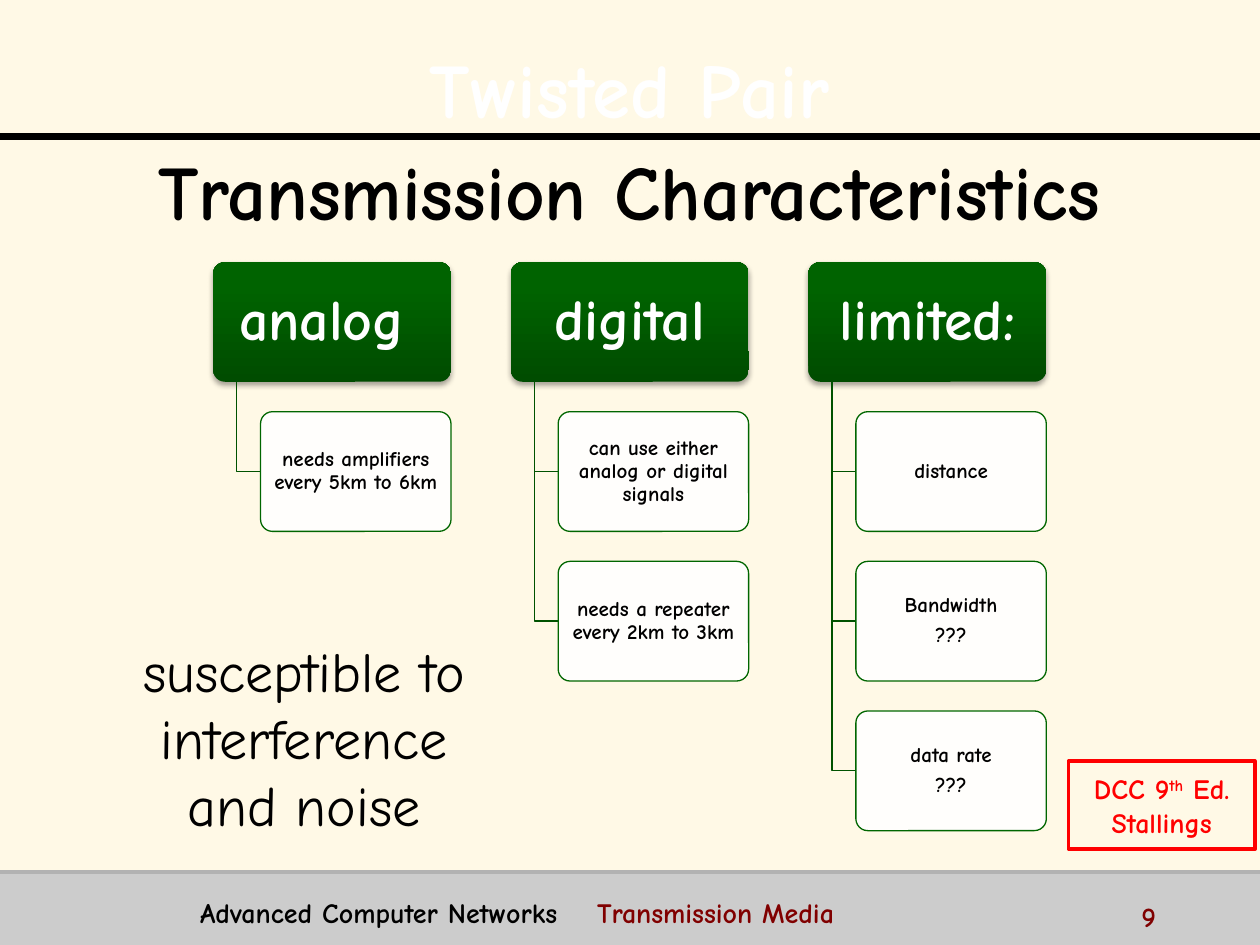
from lxml import etree
from pptx import Presentation
from pptx.dml.color import RGBColor
from pptx.enum.shapes import MSO_CONNECTOR, MSO_SHAPE
from pptx.enum.text import MSO_ANCHOR, PP_ALIGN
from pptx.oxml import parse_xml
from pptx.oxml.ns import qn
from pptx.util import Inches, Pt

CENTER, LEFT = PP_ALIGN.CENTER, PP_ALIGN.LEFT
MIDDLE, TOP = MSO_ANCHOR.MIDDLE, MSO_ANCHOR.TOP
RECTANGLE, ROUNDED = MSO_SHAPE.RECTANGLE, MSO_SHAPE.ROUNDED_RECTANGLE
STRAIGHT = MSO_CONNECTOR.STRAIGHT
DRAWING = "http://schemas.openxmlformats.org/drawingml/2006/main"

# Content
TITLE = ("Twisted Pair", "Transmission Characteristics")
BRANCHES = [
    ("analog ", [["needs amplifiers every 5km to 6km"]]),
    ("digital", [["can use either analog or digital signals"],
                 ["needs a repeater every 2km to 3km"]]),
    ("limited:", [["distance"], ["Bandwidth", "???"], ["data rate", "???"]]),
]
REMARK = "susceptible to interference and noise"
SOURCE = (("DCC 9", "th", " Ed."), ("Stallings",))
FOOTER = ("Advanced Computer Networks", "Transmission Media")
PAGE = "9"


class Theme:
    font = "Comic Neue"
    background, band, band_edge = "FFF9E6", "CCCCCC", "B2B2B2"
    black, white, red, maroon = "000000", "FFFFFF", "FF0000", "800000"
    head_dark, head_light = "004C00", "006300"
    branch, leaf_edge = "005200", "006600"
    title_size, head_size, remark_size = 44, 33, 32
    leaf_size, small_size = 12, 16


# Layout, in inches
WIDTH, HEIGHT = 10, 7.5
RULE_Y, BAND_Y = 1.08, 6.92
TREE_LEFT, TREE_TOP = 1.69, 2.08
BOX_WIDTH, BOX_HEIGHT = 1.89, 0.95
COLUMN_STEP, ROW_STEP = BOX_WIDTH * 1.25, BOX_HEIGHT * 1.25
STEM, INDENT = BOX_WIDTH * 0.1, BOX_WIDTH * 0.2
FOOTER_TAB = 3.15


def color(code):
    return RGBColor.from_string(code)


def set_text(shape, lines, size, code, bold=True, align=CENTER, anchor=MIDDLE,
             margins=(0.1, 0.05), spacing=None, after=0):
    """Each line is a tuple of run texts and becomes one paragraph."""
    frame = shape.text_frame
    frame.word_wrap = True
    frame.vertical_anchor = anchor
    frame.margin_left = frame.margin_right = Inches(margins[0])
    frame.margin_top = frame.margin_bottom = Inches(margins[1])
    for index, line in enumerate(lines):
        paragraph = frame.add_paragraph() if index else frame.paragraphs[0]
        paragraph.alignment = align
        paragraph.space_after = Pt(after)
        if spacing:
            paragraph.line_spacing = spacing
        for text in line:
            run = paragraph.add_run()
            run.text = text
            run.font.name, run.font.size = Theme.font, Pt(size)
            run.font.bold = bold
            run.font.color.rgb = color(code)
    return frame


def add_shape(kind, left, top, width, height, fill=None, line=None, weight=1):
    shape = slide.shapes.add_shape(kind, *map(Inches, (left, top, width, height)))
    shape.shadow.inherit = False
    if kind == ROUNDED:
        shape.adjustments[0] = 0.1
    if fill:
        shape.fill.solid()
        shape.fill.fore_color.rgb = color(fill)
    else:
        shape.fill.background()
    if line:
        shape.line.color.rgb = color(line)
        shape.line.width = Pt(weight)
    else:
        shape.line.fill.background()
    return shape


def add_text(left, top, width, height, lines, size, code, **options):
    box = slide.shapes.add_textbox(*map(Inches, (left, top, width, height)))
    return set_text(box, lines, size, code, **options)


def add_rule(y, code, weight):
    rule = slide.shapes.add_connector(
        STRAIGHT, 0, Inches(y), Inches(WIDTH), Inches(y))
    rule.line.color.rgb = color(code)
    rule.line.width = Pt(weight)
    etree.SubElement(rule._element.spPr, qn("a:effectLst"))


def shadow(blur, distance, angle, alpha):
    """Black outer shadow; blur and distance in points, alpha in percent."""
    return parse_xml(
        f'<a:effectLst xmlns:a="{DRAWING}"><a:outerShdw blurRad="{Pt(blur)}" '
        f'dist="{Pt(distance)}" dir="{angle * 60000}" rotWithShape="0">'
        f'<a:srgbClr val="{Theme.black}"><a:alpha val="{alpha * 1000}"/>'
        "</a:srgbClr></a:outerShdw></a:effectLst>")


def add_head(left, text):
    head = add_shape(ROUNDED, left, TREE_TOP, BOX_WIDTH, BOX_HEIGHT)
    head.fill.gradient()
    head.fill.gradient_angle = 90
    stops = ((0, Theme.head_dark), (0.8, Theme.head_light))
    for stop, (position, code) in zip(head.fill.gradient_stops, stops):
        stop.position = position
        stop.color.rgb = color(code)
    properties = head._element.spPr
    properties.replace(properties.find(qn("a:effectLst")), shadow(3.1, 1.8, 90, 35))
    set_text(head, [(text,)], Theme.head_size, Theme.white, spacing=0.9)


def add_leaf(left, row, lines):
    top = TREE_TOP + row * ROW_STEP
    # Elbow from the head's lower edge to the middle of the leaf
    stem_x, middle = Inches(left + STEM), Inches(top + BOX_HEIGHT / 2)
    builder = slide.shapes.build_freeform(stem_x, Inches(TREE_TOP + BOX_HEIGHT))
    builder.add_line_segments(
        [(stem_x, middle), (Inches(left + INDENT), middle)], close=False)
    elbow = builder.convert_to_shape()
    elbow.shadow.inherit = False
    elbow.fill.background()
    elbow.line.color.rgb = color(Theme.branch)
    elbow.line.width = Pt(0.75)

    leaf = add_shape(ROUNDED, left + INDENT, top, BOX_WIDTH - INDENT, BOX_HEIGHT,
                     Theme.white, Theme.leaf_edge, 0.75)
    fill = leaf._element.spPr.find(qn("a:solidFill"))
    etree.SubElement(fill[0], qn("a:alpha"), val="90000")
    set_text(leaf, [(line,) for line in lines], Theme.leaf_size, Theme.black,
             margins=(0.06, 0.05), spacing=0.9, after=4.2)


presentation = Presentation()
presentation.slide_width, presentation.slide_height = Inches(WIDTH), Inches(HEIGHT)
slide = presentation.slides.add_slide(presentation.slide_layouts[6])
slide.background.fill.solid()
slide.background.fill.fore_color.rgb = color(Theme.background)

# Footer band and rules
add_shape(RECTANGLE, 0, BAND_Y, WIDTH, HEIGHT - BAND_Y, Theme.band)
add_rule(RULE_Y, Theme.black, 4)
add_rule(BAND_Y, Theme.band_edge, 2)

# Title, its first line white with a shadow
title = add_text(0.5, 0.34, 9, 1.45, [(line,) for line in TITLE],
                 Theme.title_size, Theme.black, spacing=1.1)
first_run = title.paragraphs[0].runs[0]
first_run.font.color.rgb = color(Theme.white)
first_run.font.fill._xPr.find(qn("a:solidFill")).addnext(shadow(0, 2, 45, 100))

# Tree of heads and leaves
for column, (head_text, leaves) in enumerate(BRANCHES):
    column_left = TREE_LEFT + column * COLUMN_STEP
    add_head(column_left, head_text)
    for row, leaf_lines in enumerate(leaves, start=1):
        add_leaf(column_left, row, leaf_lines)

# Remark and source box
add_text(0.75, 5, 3.33, 2.12, [(REMARK,)], Theme.remark_size, Theme.black,
         bold=False, anchor=TOP)
source_box = add_shape(RECTANGLE, 8.48, 6.04, 1.48, 0.7, line=Theme.red, weight=2)
source = set_text(source_box, SOURCE, Theme.small_size, Theme.red)
source.paragraphs[0].runs[1].font._element.set("baseline", "30000")

# Footer texts
footer = add_text(1.49, 7.06, 7.2, 0.31, [(FOOTER[0] + "\t", FOOTER[1])],
                  Theme.small_size, Theme.black, align=LEFT, anchor=TOP)
footer_line = footer.paragraphs[0]
footer_line.runs[1].font.color.rgb = color(Theme.maroon)
tabs = etree.SubElement(footer_line._p.get_or_add_pPr(), qn("a:tabLst"))
etree.SubElement(tabs, qn("a:tab"), pos=str(Inches(FOOTER_TAB)), algn="l")
add_text(8.96, 7.09, 1, 0.25, [(PAGE,)], Theme.small_size, Theme.maroon,
         align=LEFT, anchor=TOP)

presentation.save("out.pptx")
